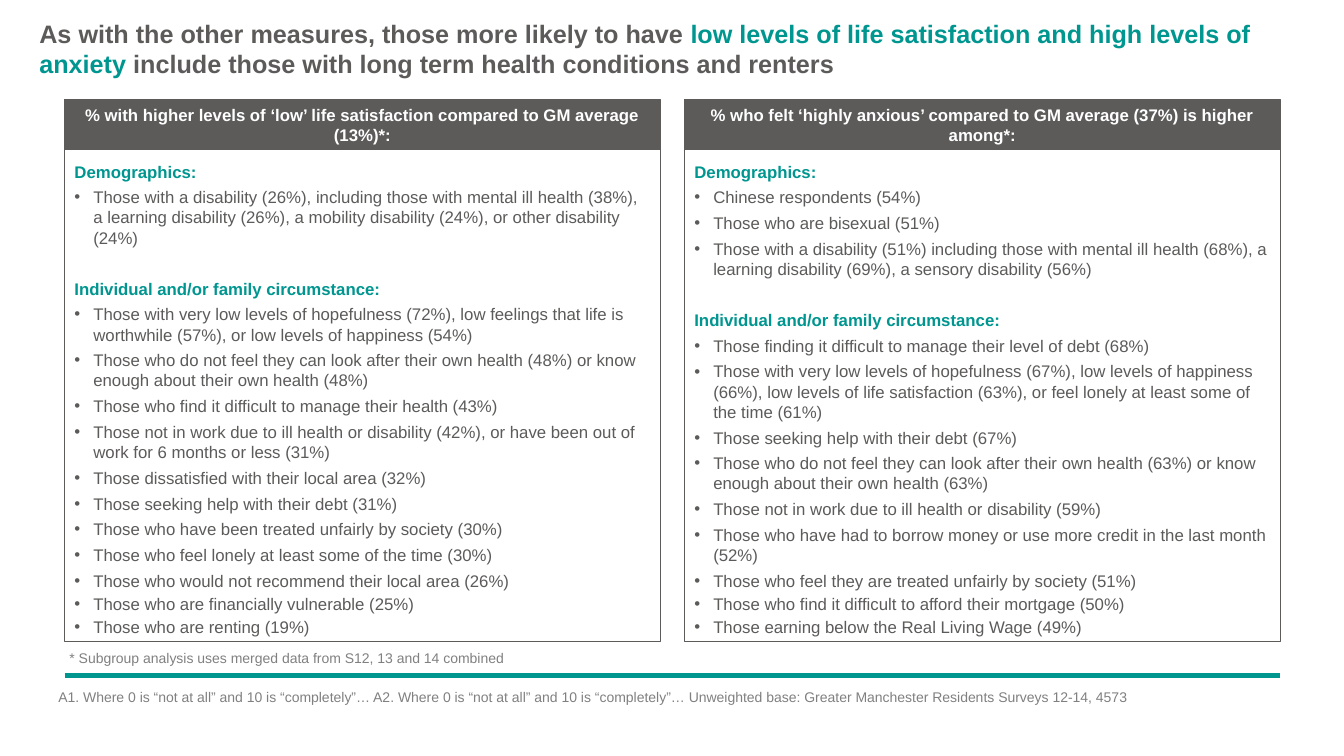
from lxml import etree
from pptx import Presentation
from pptx.dml.color import RGBColor
from pptx.enum.shapes import MSO_CONNECTOR, MSO_SHAPE
from pptx.enum.text import MSO_ANCHOR, MSO_AUTO_SIZE, PP_ALIGN
from pptx.oxml.ns import qn
from pptx.util import Pt

RECTANGLE = MSO_SHAPE.RECTANGLE
STRAIGHT = MSO_CONNECTOR.STRAIGHT
TOP, MIDDLE = MSO_ANCHOR.TOP, MSO_ANCHOR.MIDDLE
LEFT, CENTER = PP_ALIGN.LEFT, PP_ALIGN.CENTER
NO_AUTOFIT = MSO_AUTO_SIZE.NONE

FONT = "Arial"
GREY, TEAL, NOTE_GREY, WHITE = "5C5B5A", "009690", "808080", "FFFFFF"
PANEL_LEFT, PANEL_TOP, PANEL_WIDTH, PANEL_PITCH = 46.1, 71.3, 425.5, 442.8
HEADER_HEIGHT, LIST_HEIGHT = 35.3, 351.3
BULLET_INDENT = 13.5

TITLE = [
    ("As with the other measures, those more likely to have ", GREY),
    ("low levels of life satisfaction and high levels of anxiety ", TEAL),
    ("include those with long term health conditions and renters", GREY),
]
PANELS = [
    ("% with higher levels of ‘low’ life satisfaction compared to GM average (13%)*:", {
        "Demographics:": [
            "Those with a disability (26%), including those with mental ill health (38%), a learning "
            "disability (26%), a mobility disability (24%), or other disability (24%)",
        ],
        "Individual and/or family circumstance:": [
            "Those with very low levels of hopefulness (72%), low feelings that life is worthwhile (57%), "
            "or low levels of happiness (54%)",
            "Those who do not feel they can look after their own health (48%) or know enough about "
            "their own health (48%)",
            "Those who find it difficult to manage their health (43%)",
            "Those not in work due to ill health or disability (42%), or have been out of work for "
            "6 months or less (31%)",
            "Those dissatisfied with their local area (32%)",
            "Those seeking help with their debt (31%)",
            "Those who have been treated unfairly by society (30%)",
            "Those who feel lonely at least some of the time (30%)",
            "Those who would not recommend their local area (26%)",
            "Those who are financially vulnerable (25%)",
            "Those who are renting (19%)",
        ],
    }),
    ("% who felt ‘highly anxious’ compared to GM average (37%) is higher among*:", {
        "Demographics:": [
            "Chinese respondents (54%)",
            "Those who are bisexual (51%)",
            "Those with a disability (51%) including those with mental ill health (68%), a learning "
            "disability (69%), a sensory disability (56%)",
        ],
        "Individual and/or family circumstance:": [
            "Those finding it difficult to manage their level of debt (68%)",
            "Those with very low levels of hopefulness (67%), low levels of happiness (66%), low levels "
            "of life satisfaction (63%), or feel lonely at least some of the time (61%)",
            "Those seeking help with their debt (67%)",
            "Those who do not feel they can look after their own health (63%) or know enough about "
            "their own health (63%)",
            "Those not in work due to ill health or disability (59%)",
            "Those who have had to borrow money or use more credit in the last month (52%)",
            "Those who feel they are treated unfairly by society (51%)",
            "Those who find it difficult to afford their mortgage (50%)",
            "Those earning below the Real Living Wage (49%)",
        ],
    }),
]
FOOTNOTE = "* Subgroup analysis uses merged data from S12, 13 and 14 combined"
SOURCE = ("A1. Where 0 is “not at all” and 10 is “completely”… A2. Where 0 is “not at all” and 10 is "
          "“completely”… Unweighted base: Greater Manchester Residents Surveys 12-14, 4573")


def color(hex_code):
    return RGBColor.from_string(hex_code)


def set_font(font, size, hex_code, bold=False):
    font.name, font.size, font.bold = FONT, Pt(size), bold
    font.color.rgb = color(hex_code)


def set_frame(frame, anchor=TOP, insets=(7.2, 3.6, 7.2, 3.6)):
    frame.word_wrap = True
    frame.auto_size = NO_AUTOFIT
    frame.vertical_anchor = anchor
    frame.margin_left, frame.margin_top, frame.margin_right, frame.margin_bottom = map(Pt, insets)


def place(shape, left, top, width, height):
    shape.left, shape.top, shape.width, shape.height = map(Pt, (left, top, width, height))


def set_bullet(paragraph, indent):
    """Give a hanging bullet, or none when the indent is 0."""
    properties = paragraph._p.get_or_add_pPr()
    properties.set("marL", str(Pt(indent)))
    properties.set("indent", str(-Pt(indent)))
    if indent:
        etree.SubElement(properties, qn("a:buFont"), typeface=FONT)
        etree.SubElement(properties, qn("a:buChar"), char="•")
    else:
        etree.SubElement(properties, qn("a:buNone"))


def add_title(slide, *box):
    title = slide.shapes.title
    place(title, *box)
    set_frame(title.text_frame, insets=(0, 0, 0, 0))
    paragraph = title.text_frame.paragraphs[0]
    paragraph.alignment = LEFT
    for words, hex_code in TITLE:
        run = paragraph.add_run()
        run.text = words
        set_font(run.font, 18, hex_code, bold=True)


def add_box(slide, *box):
    rectangle = slide.shapes.add_shape(RECTANGLE, *map(Pt, box))
    rectangle.shadow.inherit = False
    rectangle.line.color.rgb = color(GREY)
    rectangle.line.width = Pt(0.75)
    return rectangle


def add_panel(slide, left, top, width, heading, groups):
    header = add_box(slide, left, top, width, HEADER_HEIGHT)
    header.fill.solid()
    header.fill.fore_color.rgb = color(GREY)
    set_frame(header.text_frame, MIDDLE)
    heading_line = header.text_frame.paragraphs[0]
    heading_line.text = heading
    heading_line.alignment = CENTER
    heading_line.space_after = Pt(4)
    set_font(heading_line.font, 12, WHITE, bold=True)

    findings = add_box(slide, left, top + HEADER_HEIGHT, width, LIST_HEIGHT)
    findings.fill.background()
    frame = findings.text_frame
    set_frame(frame, insets=(7.2, 8.6, 7.2, 3.6))
    for number, (group, items) in enumerate(groups.items()):
        group_line = frame.add_paragraph() if number else frame.paragraphs[0]
        group_line.text = group
        group_line.space_before = Pt(18 if number else 0)
        set_font(group_line.font, 12, TEAL, bold=True)
        for item in items:
            item_line = frame.add_paragraph()
            item_line.text = item
            set_bullet(item_line, BULLET_INDENT)
            set_font(item_line.font, 12, GREY)
    for paragraph in frame.paragraphs:
        paragraph.alignment = LEFT
        paragraph.space_after = Pt(4)
    for paragraph in frame.paragraphs[-3:]:
        paragraph.space_after = Pt(2)


def add_footer(slide, left, top, width):
    footnote = slide.placeholders[1]
    place(footnote, left - 6.5, top, 374, 19)
    set_frame(footnote.text_frame, insets=(10, 3.6, 7.2, 3.6))
    note_line = footnote.text_frame.paragraphs[0]
    note_line.text = FOOTNOTE
    note_line.line_spacing = 0.9
    note_line.space_before = Pt(0)
    set_bullet(note_line, 0)
    set_font(note_line.font, 10, NOTE_GREY)

    rule_y = Pt(top + 21)
    rule = slide.shapes.add_connector(STRAIGHT, Pt(left), rule_y, Pt(left + width), rule_y)
    rule.line.color.rgb = color(TEAL)
    rule.line.width = Pt(3)
    etree.SubElement(rule._element.spPr, qn("a:effectLst"))

    source = slide.shapes.add_textbox(Pt(left - 11.5), Pt(top + 26.7), Pt(835), Pt(42))
    set_frame(source.text_frame)
    source_line = source.text_frame.paragraphs[0]
    source_line.text = SOURCE
    set_font(source_line.font, 10, NOTE_GREY)


def main():
    deck = Presentation()
    deck.slide_width, deck.slide_height = Pt(960), Pt(540)
    slide = deck.slides.add_slide(deck.slide_layouts[1])
    add_title(slide, 28.1, 13, 904.3, 44)
    for column, (heading, groups) in enumerate(PANELS):
        add_panel(slide, PANEL_LEFT + column * PANEL_PITCH, PANEL_TOP, PANEL_WIDTH, heading, groups)
    add_footer(slide, PANEL_LEFT, 461.5, PANEL_PITCH + PANEL_WIDTH)
    deck.save("out.pptx")


if __name__ == "__main__":
    main()
